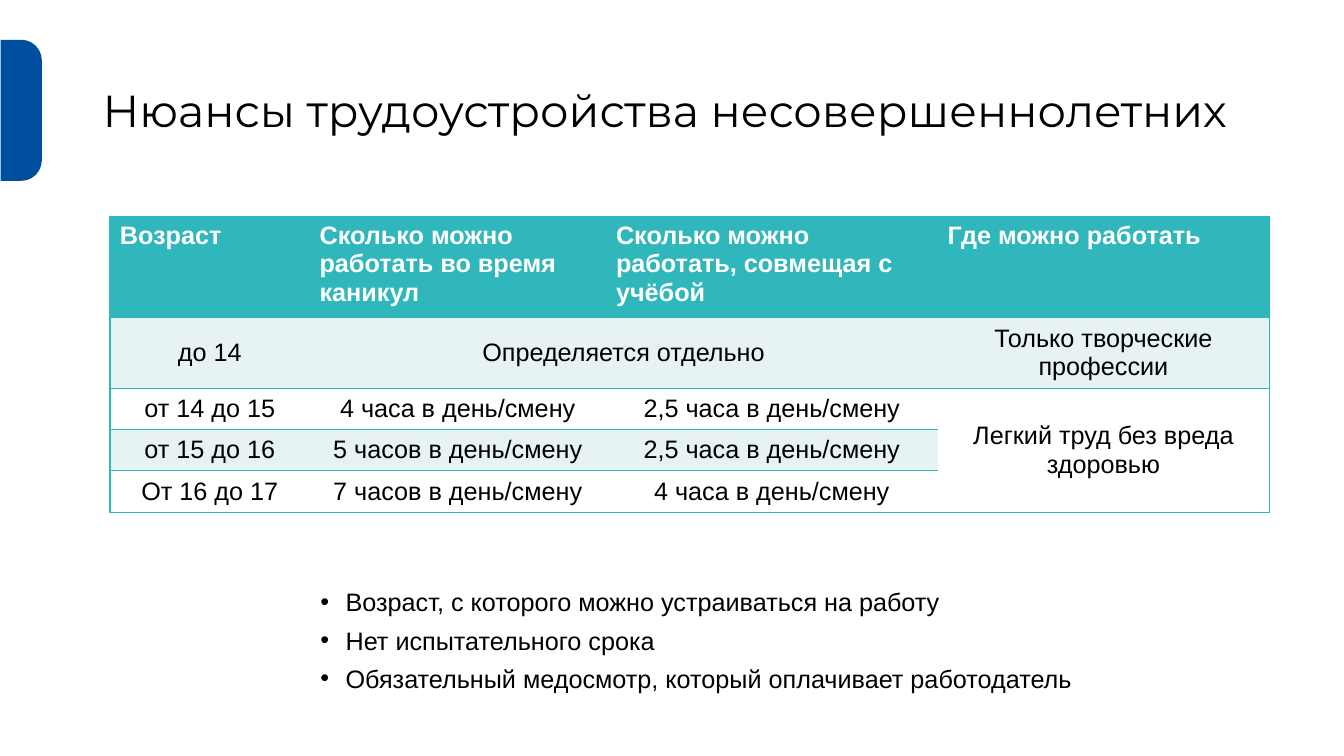
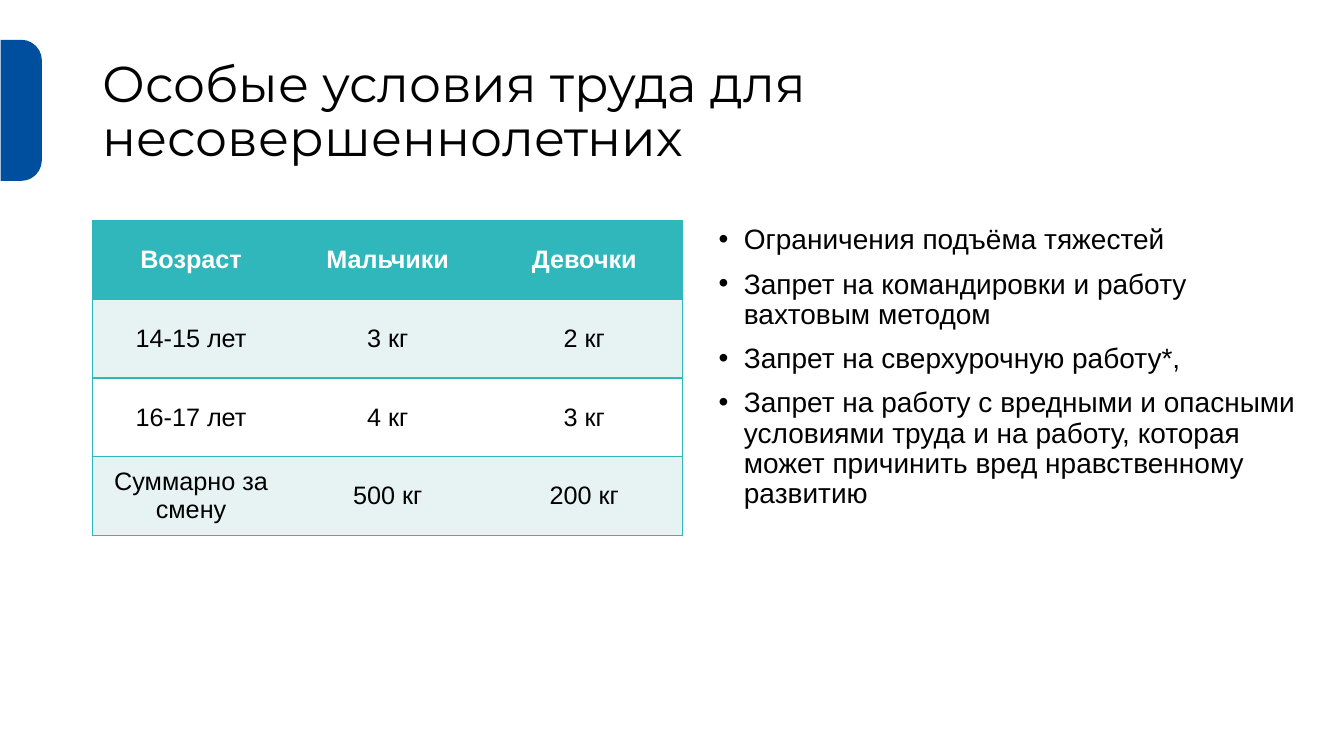
import pptx
import pptx.util
import pptx.dml.color
import pptx.enum.shapes
import pptx.enum.text
import pptx.oxml.ns
from lxml import etree

Inches = pptx.util.Inches
Pt = pptx.util.Pt
qn = pptx.oxml.ns.qn
MIDDLE = pptx.enum.text.MSO_ANCHOR.MIDDLE
CENTER = pptx.enum.text.PP_ALIGN.CENTER
LEFT = pptx.enum.text.PP_ALIGN.LEFT

COLORS = {
    "band": "004F9F",
    "teal": "30B7BC",
    "tint": "E7F3F3",
    "white": "FFFFFF",
    "text": "000000",
}
NO_TABLE_STYLE = "{2D5ABB26-0587-4C30-8999-92F81FD0307C}"


def rgb(name):
    return pptx.dml.color.RGBColor.from_string(COLORS[name])


class Deck:
    """Holds the shared style and the slide being built."""

    title_font = "Montserrat"
    body_font = "Arial"
    table_size = 18

    def __init__(self):
        self.prs = pptx.Presentation()
        self.prs.slide_width = Inches(13.33)
        self.prs.slide_height = Inches(7.5)
        self.s = None

    def slide(self, title, size):
        """Start a slide with the side band and its title."""
        self.s = self.prs.slides.add_slide(self.prs.slide_layouts[6])
        self.band()
        tf = self.text_frame(0.92, 0.4, 11.5, 1.45)
        tf.vertical_anchor = MIDDLE
        tf.text = title
        p = tf.paragraphs[0]
        p.line_spacing = 0.9
        self.format(p, self.title_font, size)

    def band(self):
        sp = self.s.shapes.add_shape(
            pptx.enum.shapes.MSO_SHAPE.ROUND_2_SAME_RECTANGLE,
            Inches(-0.49), Inches(0.89), Inches(1.4), Inches(0.41))
        sp.adjustments[0] = 0.5
        sp.rotation = 90
        sp.shadow.inherit = False
        sp.fill.solid()
        sp.fill.fore_color.rgb = rgb("band")
        sp.line.fill.background()

    def text_frame(self, x, y, w, h):
        sp = self.s.shapes.add_textbox(Inches(x), Inches(y), Inches(w), Inches(h))
        sp.text_frame.word_wrap = True
        return sp.text_frame

    def format(self, p, font, size, color="text", bold=False):
        for r in p.runs:
            r.font.name = font
            r.font.size = Pt(size)
            r.font.bold = bold
            r.font.color.rgb = rgb(color)

    def bullets(self, x, y, w, h, items, size, line_spacing):
        tf = self.text_frame(x, y, w, h)
        for i, item in enumerate(items):
            p = tf.add_paragraph() if i else tf.paragraphs[0]
            p.text = item
            p.line_spacing = line_spacing
            p.space_before = Pt(10 if i else 0)
            pPr = p._p.get_or_add_pPr()
            pPr.set("marL", str(Inches(0.25)))
            pPr.set("indent", str(Inches(-0.25)))
            etree.SubElement(pPr, qn("a:buFont"), typeface=self.body_font)
            etree.SubElement(pPr, qn("a:buChar"), char="•")
            self.format(p, self.body_font, size)

    def table(self, x, y, widths, heights, rows, spans=(), header_centered=True):
        """Banded table; None marks a cell covered by one of the spans."""
        frame = self.s.shapes.add_table(
            len(rows), len(widths), Inches(x), Inches(y),
            Inches(sum(widths)), Inches(sum(heights)))
        table = frame.table
        table._tbl.tblPr.find(qn("a:tableStyleId")).text = NO_TABLE_STYLE
        for column, width in zip(table.columns, widths):
            column.width = Inches(width)
        for row, height in zip(table.rows, heights):
            row.height = Inches(height)
        for first, last in spans:
            table.cell(*first).merge(table.cell(*last))

        for i, row in enumerate(rows):
            header = i == 0
            fill = "teal" if header else "tint" if i % 2 else "white"
            centered = header_centered or not header
            for j, text in enumerate(row):
                cell = table.cell(i, j)
                if text is not None:
                    self.borders(cell, left=j == 0, right=j == len(row) - 1)
                    cell.text = text
                    p = cell.text_frame.paragraphs[0]
                    p.alignment = CENTER if centered else LEFT
                    if centered:
                        cell.vertical_anchor = MIDDLE
                    self.format(p, self.body_font, self.table_size,
                                "white" if header else "text", header)
                cell.fill.solid()
                cell.fill.fore_color.rgb = rgb(fill)

    def borders(self, cell, left, right):
        """Rule a cell above and below, and at the table's outer sides."""
        tcPr = cell._tc.get_or_add_tcPr()
        sides = {"a:lnL": left, "a:lnR": right, "a:lnT": True, "a:lnB": True}
        for tag, drawn in sides.items():
            if drawn:
                ln = etree.SubElement(tcPr, qn(tag), w=str(Pt(1)))
                fill = etree.SubElement(ln, qn("a:solidFill"))
                etree.SubElement(fill, qn("a:srgbClr"), val=COLORS["teal"])


def main():
    deck = Deck()

    deck.slide("Нюансы трудоустройства несовершеннолетних", 32)
    deck.bullets(3.08, 5.83, 9.34, 1.14, [
        "Возраст, с которого можно устраиваться на работу",
        "Нет испытательного срока",
        "Обязательный медосмотр, который оплачивает работодатель",
    ], 18, 0.8)
    deck.table(1.09, 2.15, [1.98, 2.94, 3.29, 3.29], [0.94, 0.66] + [0.41] * 3, [
        ["Возраст", "Сколько можно работать во время каникул",
         "Сколько можно работать, совмещая с учёбой", "Где можно работать"],
        ["до 14", "Определяется отдельно", None, "Только творческие профессии"],
        ["от 14 до 15", "4 часа в день/смену", "2,5 часа в день/смену",
         "Легкий труд без вреда здоровью"],
        ["от 15 до 16", "5 часов в день/смену", "2,5 часа в день/смену", None],
        ["От 16 до 17", "7 часов в день/смену", "4 часа в день/смену", None],
    ], spans=[((1, 1), (1, 2)), ((2, 3), (4, 3))], header_centered=False)

    deck.slide("Особые условия труда для несовершеннолетних", 36)
    deck.bullets(7.03, 2.19, 5.96, 4.4, [
        "Ограничения подъёма тяжестей",
        "Запрет на командировки и работу вахтовым методом",
        "Запрет на сверхурочную работу*,",
        "Запрет на работу с вредными и опасными условиями труда и на работу, "
        "которая может причинить вред нравственному развитию",
    ], 20, 0.9)
    deck.table(0.92, 2.19, [1.95] * 3, [0.78] * 4, [
        ["Возраст", "Мальчики", "Девочки"],
        ["14-15 лет", "3 кг", "2 кг"],
        ["16-17 лет", "4 кг", "3 кг"],
        ["Суммарно за смену", "500 кг", "200 кг"],
    ])

    deck.prs.save("out.pptx")


if __name__ == "__main__":
    main()
